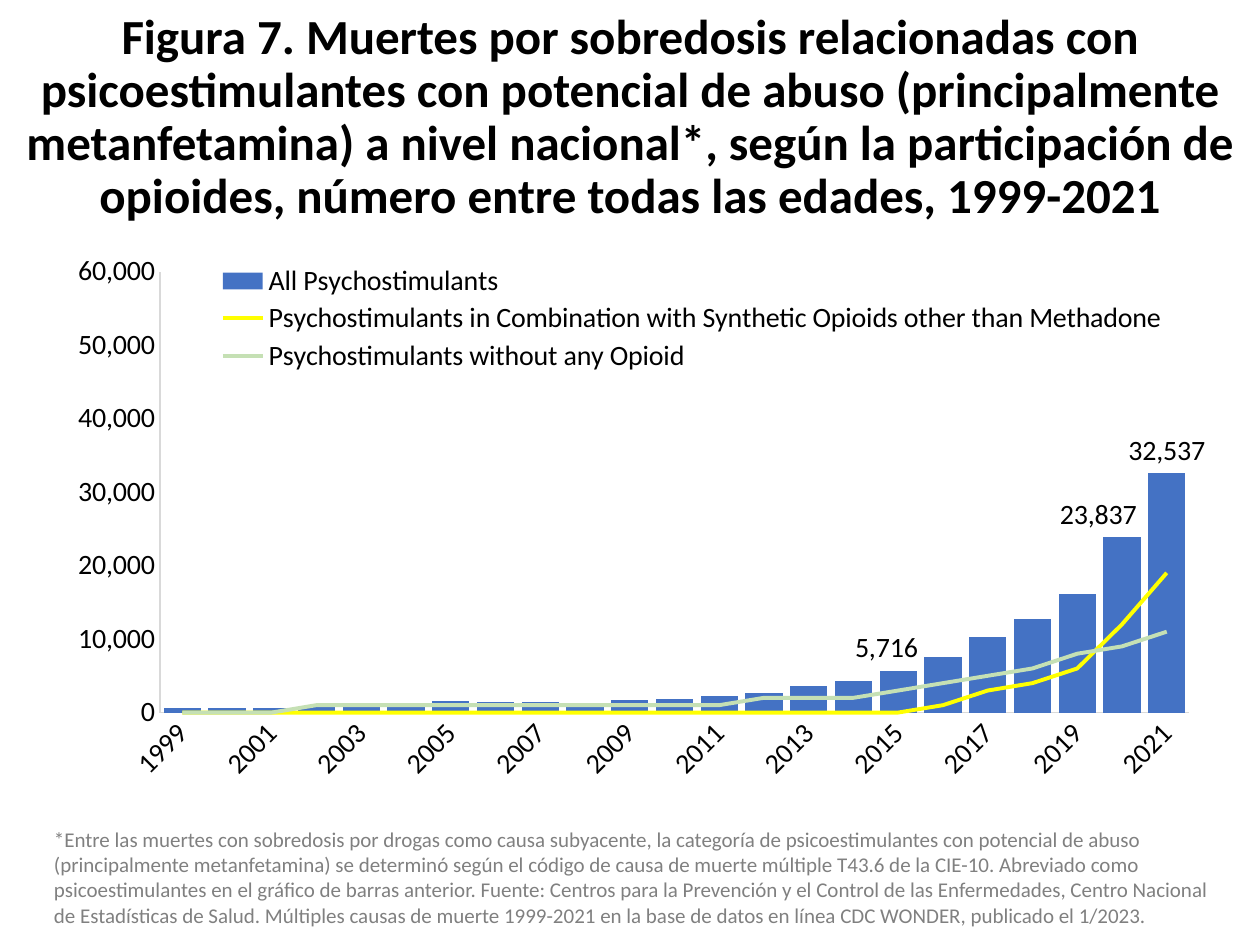
from lxml.etree import SubElement
from pptx import Presentation
from pptx.chart.data import CategoryChartData
from pptx.dml.color import RGBColor
from pptx.enum.chart import XL_CHART_TYPE as ChartType, XL_LABEL_POSITION as LabelPos
from pptx.enum.chart import XL_LEGEND_POSITION as LegendPos, XL_MARKER_STYLE as Marker
from pptx.enum.chart import XL_TICK_MARK as Tick
from pptx.enum.text import MSO_ANCHOR, PP_ALIGN
from pptx.oxml import parse_xml
from pptx.oxml.ns import nsdecls, qn
from pptx.util import Inches, Pt

BLACK = RGBColor(0, 0, 0)
GRAY = RGBColor(0x80, 0x80, 0x80)
AXIS_GRAY = RGBColor(0xD9, 0xD9, 0xD9)
BLUE = RGBColor(0x44, 0x72, 0xC4)
YELLOW = RGBColor(0xFF, 0xFF, 0)
GREEN = RGBColor(0xC5, 0xE0, 0xB4)
FONT = "Calibri"

TITLE = (
    "Figura 7. Muertes por sobredosis relacionadas con psicoestimulantes con potencial "
    "de abuso (principalmente metanfetamina) a nivel nacional*, según la participación "
    "de opioides, número entre todas las edades, 1999-2021"
)
FOOTNOTE = (
    "*Entre las muertes con sobredosis por drogas como causa subyacente, la categoría de "
    "psicoestimulantes con potencial de abuso (principalmente metanfetamina) se determinó "
    "según el código de causa de muerte múltiple T43.6 de la CIE-10. Abreviado como "
    "psicoestimulantes en el gráfico de barras anterior. Fuente: Centros para la Prevención "
    "y el Control de las Enfermedades, Centro Nacional de Estadísticas de Salud. Múltiples "
    "causas de muerte 1999-2021 en la base de datos en línea CDC WONDER, publicado el 1/2023."
)
YEARS = [str(year) for year in range(1999, 2022)]
DEATHS = {
    "All Psychostimulants": [
        547, 578, 563, 941, 1179, 1305, 1608, 1462, 1378, 1302, 1632, 1854,
        2266, 2635, 3627, 4298, 5716, 7542, 10333, 12676, 16167, 23837, 32537],
    "Psychostimulants in Combination with Synthetic Opioids other than Methadone":
        [0] * 17 + [1000, 3000, 4000, 6000, 12000, 19000],
    "Psychostimulants without any Opioid":
        [0] * 3 + [1000] * 10 + [2000] * 3
        + [3000, 4000, 5000, 6000, 8000, 9000, 11000],
}
LABEL_SHIFTS = {"2015": -0.01, "2020": -0.02, "2021": 0}


def style_font(font, size, color=BLACK, bold=False):
    font.name, font.size, font.bold = FONT, Pt(size), bold
    font.color.rgb = color


def add_text(slide, text, box, size, color, bold=False):
    frame = slide.shapes.add_textbox(*map(Inches, box)).text_frame
    frame.word_wrap = True
    frame.text = text
    style_font(frame.paragraphs[0].runs[0].font, size, color, bold)
    return frame


def make_layout(target=None, **position):
    layout = parse_xml(f"<c:layout {nsdecls('c')}><c:manualLayout/></c:layout>")
    if target:
        SubElement(layout[0], qn("c:layoutTarget"), val=target)
    for mode in ("xMode", "yMode"):
        if mode[0] in position and target != "label":
            SubElement(layout[0], qn(f"c:{mode}"), val="edge")
    for key, value in position.items():
        SubElement(layout[0], qn(f"c:{key}"), val=str(value))
    return layout


def make_label_shift(shift):
    return parse_xml(
        f"<c:layout {nsdecls('c')}><c:manualLayout>"
        f'<c:x val="{shift}"/><c:y val="0"/></c:manualLayout></c:layout>')


def move_to_lines(chart):
    bars = chart.plots[0]
    bar_xml = bars._element
    line_xml = parse_xml(
        f'<c:lineChart {nsdecls("c")}><c:grouping val="standard"/>'
        '<c:varyColors val="0"/></c:lineChart>')
    for series in list(bars.series)[1:]:
        series_xml = series._element
        for flag in series_xml.findall(qn("c:invertIfNegative")):
            series_xml.remove(flag)
        line_xml.append(series_xml)
    SubElement(line_xml, qn("c:marker"), val="1")
    for axis_id in bar_xml.findall(qn("c:axId")):
        SubElement(line_xml, qn("c:axId"), val=axis_id.get("val"))
    bar_xml.addnext(line_xml)


def style_bars(plot):
    plot.gap_width, plot.overlap, plot.vary_by_categories = 20, -1, False
    totals = plot.series[0]
    totals.format.fill.solid()
    totals.format.fill.fore_color.rgb = BLUE
    totals.data_labels.show_value = False
    for year, shift in LABEL_SHIFTS.items():
        index = YEARS.index(year)
        label = totals.points[index].data_label
        style_font(label.font, 16)
        label.position = LabelPos.OUTSIDE_END
        if shift:
            label_xml = totals.data_labels._element.xpath(
                f"c:dLbl[c:idx/@val='{index}']")[0]
            label_xml[0].addnext(make_label_shift(shift))


def style_lines(plot):
    for series, color in zip(plot.series, (YELLOW, GREEN)):
        series.smooth = False
        series.marker.style = Marker.NONE
        series.format.line.color.rgb = color
        series.format.line.width = Pt(2.25)


def style_axes(chart):
    for axis in (chart.category_axis, chart.value_axis):
        axis.has_major_gridlines = False
        axis.major_tick_mark = axis.minor_tick_mark = Tick.NONE
        axis.format.line.color.rgb = AXIS_GRAY
        axis.format.line.width = Pt(0.75)
        style_font(axis.tick_labels.font, 16)
    values = chart.value_axis
    values.minimum_scale, values.maximum_scale, values.major_unit = 0, 60000, 10000
    values.tick_labels.number_format = "#,##0"
    values.tick_labels.number_format_is_linked = False
    years_xml = chart.category_axis._element
    years_xml.find(qn("c:txPr")).find(qn("a:bodyPr")).set("rot", "-2700000")
    skip = parse_xml(f'<c:tickLblSkip {nsdecls("c")} val="2"/>')
    years_xml.find(qn("c:noMultiLvlLbl")).addprevious(skip)


def add_deaths_chart(slide):
    data = CategoryChartData(number_format="#,##0")
    data.categories = YEARS
    for name, values in DEATHS.items():
        data.add_series(name, values)
    box = map(Inches, (0.33, 2.02, 9.39, 4.38))
    chart = slide.shapes.add_chart(ChartType.COLUMN_CLUSTERED, *box, data).chart
    chart.has_title = False
    style_font(chart.font, 16)
    move_to_lines(chart)
    style_bars(chart.plots[0])
    style_lines(chart.plots[1])
    style_axes(chart)
    chart.has_legend = True
    legend = chart.legend
    legend.position = LegendPos.BOTTOM
    legend.include_in_layout = False
    style_font(legend.font, 16)
    legend._element.find(qn("c:legendPos")).addnext(
        make_layout(x=0.13, y=0.01, w=0.84, h=0.21))
    plot_area = chart.plots[0]._element.getparent()
    for old_layout in plot_area.findall(qn("c:layout")):
        plot_area.remove(old_layout)
    plot_area.insert(0, make_layout("inner", x=0.1, y=0.03, w=0.87, h=0.8))


def main():
    """Build the slide on psychostimulant overdose deaths."""
    prs = Presentation()
    prs.slide_width, prs.slide_height = Inches(10), Inches(7.5)
    slide = prs.slides.add_slide(prs.slide_layouts[6])
    title = add_text(slide, TITLE, (0, 0, 10, 1.87), 28, BLACK, bold=True)
    title.vertical_anchor = MSO_ANCHOR.MIDDLE
    title.paragraphs[0].alignment = PP_ALIGN.CENTER
    title.paragraphs[0].line_spacing = 0.9
    add_deaths_chart(slide)
    add_text(slide, FOOTNOTE, (0.33, 6.51, 9.39, 0.91), 12, GRAY)
    prs.save("out.pptx")


if __name__ == "__main__":
    main()
